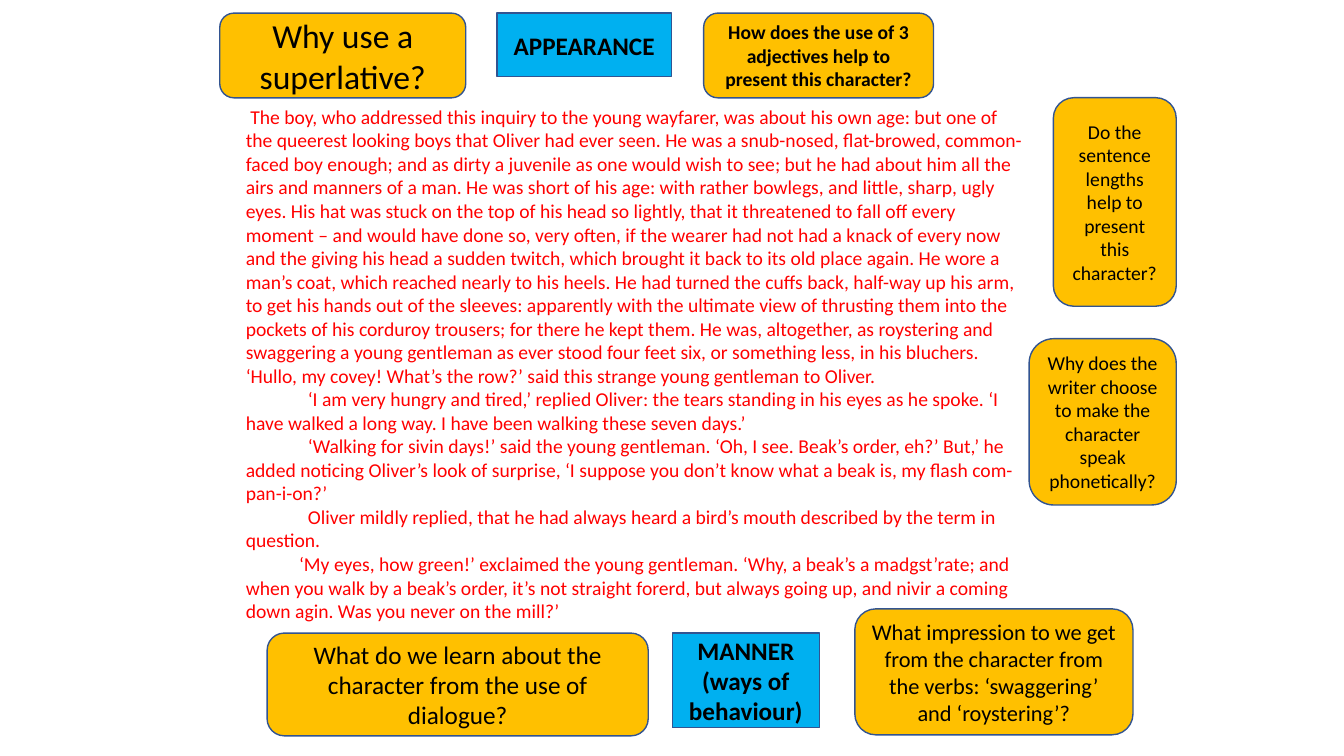
from dataclasses import dataclass

from pptx import Presentation
from pptx.dml.color import RGBColor
from pptx.enum.shapes import MSO_SHAPE
from pptx.enum.text import MSO_ANCHOR, MSO_AUTO_SIZE, PP_ALIGN
from pptx.util import Pt

ROUNDED = MSO_SHAPE.ROUNDED_RECTANGLE
RECT = MSO_SHAPE.RECTANGLE
MIDDLE = MSO_ANCHOR.MIDDLE
GROW = MSO_AUTO_SIZE.SHAPE_TO_FIT_TEXT
LEFT = PP_ALIGN.LEFT
CENTER = PP_ALIGN.CENTER

FONT = "Calibri"
COLORS = {
    "question": "FFC000",
    "heading": "00B0F0",
    "outline": "325491",
    "label": "000000",
    "passage": "FF0000",
}


@dataclass
class Box:
    left: float
    top: float
    width: float
    height: float
    size: float
    lines: list[str]
    bold: bool = False
    heading: bool = False


@dataclass
class Para:
    indent: float
    sentences: list[str]


TOP_ROW = 9.4
BOTTOM_ROW = 452.2

BOXES = [
    Box(502.6, TOP_ROW, 164.2, 60.5, 14,
        ["How does the use of 3 adjectives help to present this character?"], bold=True),
    Box(157, TOP_ROW, 175.7, 60.5, 24, ["Why use a superlative?"]),
    Box(752.4, 69.8, 87.8, 149, 14,
        ["Do the sentence lengths help to present this character?"]),
    Box(610.6, 434.9, 198.7, 90, 16,
        ["What impression to we get from the character from the verbs: "
         "‘swaggering’ and ‘roystering’?"]),
    Box(735.1, 241.9, 105.1, 118.8, 14,
        ["Why does the writer choose to make the character speak phonetically?"]),
    Box(190.8, BOTTOM_ROW, 272.2, 73.4, 18,
        ["What do we learn about the character from the use of dialogue?"]),
    Box(355, TOP_ROW, 124.6, 45.4, 18, ["APPEARANCE"], bold=True, heading=True),
    Box(480.2, BOTTOM_ROW, 105.1, 67.7, 18,
        ["MANNER", "(ways of behaviour)"], bold=True, heading=True),
]

PASSAGE = [
    Para(3.2, [
        "The boy, who addressed this inquiry to the young wayfarer, was about his own age: "
        "but one of the queerest looking boys that Oliver had ever seen.",
        "He was a snub-nosed, flat-browed, common-faced boy enough; and as dirty a juvenile "
        "as one would wish to see; but he had about him all the airs and manners of a man.",
        "He was short of his age: with rather bowlegs, and little, sharp, ugly eyes.",
        "His hat was stuck on the top of his head so lightly, that it threatened to fall off "
        "every moment – and would have done so, very often, if the wearer had not had a knack "
        "of every now and the giving his head a sudden twitch, which brought it back to its "
        "old place again.",
        "He wore a man’s coat, which reached nearly to his heels.",
        "He had turned the cuffs back, half-way up his arm, to get his hands out of the "
        "sleeves: apparently with the ultimate view of thrusting them into the pockets of his "
        "corduroy trousers; for there he kept them.",
        "He was, altogether, as roystering and swaggering a young gentleman as ever stood "
        "four feet six, or something less, in his bluchers.",
    ]),
    Para(0, ["‘Hullo, my covey! What’s the row?’ said this strange young gentleman to Oliver."]),
    Para(44.3, [
        "‘I am very hungry and tired,’ replied Oliver: the tears standing in his eyes as he "
        "spoke.",
        "‘I have walked a long way. I have been walking these seven days.’",
    ]),
    Para(44.3, [
        "‘Walking for sivin days!’ said the young gentleman.",
        "‘Oh, I see. Beak’s order, eh?’ But,’ he added noticing Oliver’s look of surprise, "
        "‘I suppose you don’t know what a beak is, my flash com-pan-i-on?’",
    ]),
    Para(44.3, [
        "Oliver mildly replied, that he had always heard a bird’s mouth described by the "
        "term in question.",
    ]),
    Para(38, [
        "‘My eyes, how green!’ exclaimed the young gentleman.",
        "‘Why, a beak’s a madgst’rate; and when you walk by a beak’s order, it’s not straight "
        "forerd, but always going up, and nivir a coming down agin.",
        "Was you never on the mill?’",
    ]),
]


def rgb(name: str) -> RGBColor:
    return RGBColor.from_string(COLORS[name])


def write(tf, paras: list[Para], size: float, color: str, align, bold: bool = False) -> None:
    tf.word_wrap = True
    for i, para in enumerate(paras):
        p = tf.add_paragraph() if i else tf.paragraphs[0]
        p.text = " ".join(para.sentences)
        p.alignment = align
        if para.indent:
            p._p.get_or_add_pPr().set("indent", str(Pt(para.indent)))
        p.font.name = FONT
        p.font.size = Pt(size)
        p.font.bold = bold
        p.font.color.rgb = rgb(color)


def add_passage(s) -> None:
    sp = s.shapes.add_textbox(Pt(168.5), Pt(71.3), Pt(572.4), Pt(380.2))
    write(sp.text_frame, PASSAGE, 14, "passage", LEFT)
    sp.text_frame.auto_size = GROW


def add_box(s, box: Box) -> None:
    sp = s.shapes.add_shape(RECT if box.heading else ROUNDED,
                            Pt(box.left), Pt(box.top), Pt(box.width), Pt(box.height))
    sp.shadow.inherit = False
    sp.fill.solid()
    sp.fill.fore_color.rgb = rgb("heading" if box.heading else "question")
    sp.line.color.rgb = rgb("outline")
    sp.line.width = Pt(1)
    sp.text_frame.vertical_anchor = MIDDLE
    write(sp.text_frame, [Para(0, [line]) for line in box.lines],
          box.size, "label", CENTER, box.bold)


def main() -> None:
    prs = Presentation()
    prs.slide_width, prs.slide_height = Pt(960), Pt(540)
    s = prs.slides.add_slide(prs.slide_layouts[6])

    # Extract in the centre
    add_passage(s)

    # Questions and headings around it
    for box in BOXES:
        add_box(s, box)

    prs.save("out.pptx")


if __name__ == "__main__":
    main()
